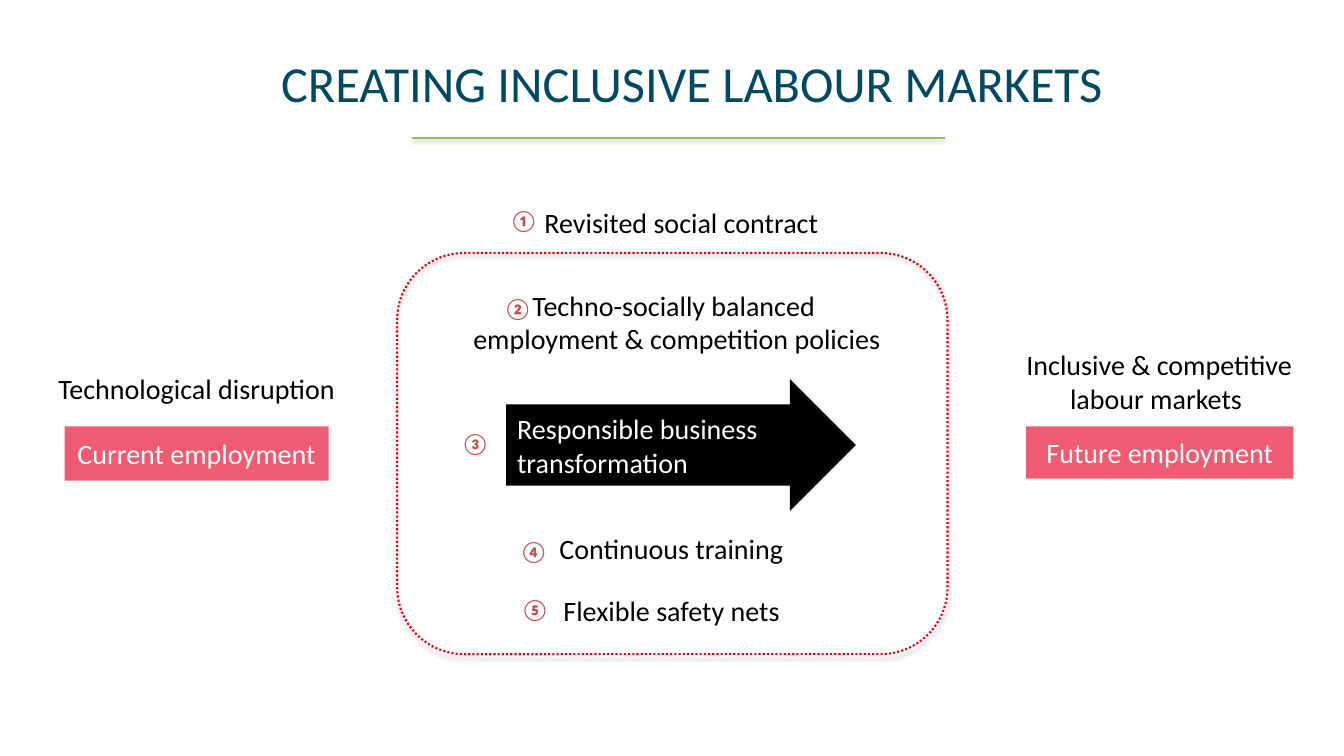
from lxml.etree import SubElement
from pptx import Presentation
from pptx.dml.color import RGBColor
from pptx.enum.dml import MSO_LINE
from pptx.enum.shapes import MSO_CONNECTOR, MSO_SHAPE
from pptx.enum.text import MSO_ANCHOR, PP_ALIGN
from pptx.oxml.ns import qn
from pptx.util import Inches, Pt

deck = Presentation()
deck.slide_width, deck.slide_height = Inches(13.33), Inches(7.5)
column, row = deck.slide_width / 100, deck.slide_height / 100
slide = deck.slides.add_slide(deck.slide_layouts[6])
shapes = slide.shapes
LEFT, CENTER = PP_ALIGN.LEFT, PP_ALIGN.CENTER


def colour(code):
    return RGBColor.from_string(code)


def write(holder, lines, align, ink, size=20, bold=False, inset=(0.11, 0.06), wrap=True):
    frame = holder.text_frame
    across, down = map(Inches, inset)
    settings = {"word_wrap": wrap, "margin_left": across, "margin_right": across,
                "margin_top": down, "margin_bottom": down}
    for key, value in settings.items():
        setattr(frame, key, value)
    for index, line in enumerate(lines):
        paragraph = frame.paragraphs[0] if index == 0 else frame.add_paragraph()
        paragraph.alignment = align
        run = paragraph.add_run()
        run.text = line
        for key, value in {"name": "Calibri", "size": Pt(size), "bold": bold}.items():
            setattr(run.font, key, value)
        run.font.color.rgb = colour(ink)


title = shapes.add_textbox(6.3 * column, 6.27 * row, 90.38 * column, 9.47 * row)
write(title, ["CREATING INCLUSIVE LABOUR MARKETS"], CENTER, "004962", 36, inset=(0.1, 0.05))

underline = shapes.add_connector(MSO_CONNECTOR.STRAIGHT, 30.68 * column, 18.27 * row,
                                 70.35 * column, 18.27 * row)
underline.line.color.rgb = colour("9BBB59")
underline.line.width = Pt(1)

policy_frame = shapes.add_shape(MSO_SHAPE.ROUNDED_RECTANGLE, 29.55 * column, 33.47 * row,
                                40.95 * column, 53.07 * row)
policy_frame.adjustments[0] = 0.167
policy_frame.fill.background()
policy_frame.line.color.rgb = colour("E50012")
policy_frame.line.width = Pt(1.5)
policy_frame.line.dash_style = MSO_LINE.ROUND_DOT

for bordered, opacity, distance in [(underline, 38, 1.6), (policy_frame, 35, 1.8)]:
    effects = SubElement(bordered.element.spPr, qn("a:effectLst"))
    shadow = SubElement(effects, qn("a:outerShdw"), blurRad=str(Pt(3.1)),
                        dist=str(Pt(distance)), dir="5400000", rotWithShape="0")
    black = SubElement(shadow, qn("a:srgbClr"), val="000000")
    SubElement(black, qn("a:alpha"), val=str(opacity * 1000))

blocks = [
    (MSO_SHAPE.RECTANGLE, 4.8, 56.4, 19.65, 7.2, "EF5B70", CENTER, "Current employment"),
    (MSO_SHAPE.RIGHT_ARROW, 37.65, 50.13, 26.03, 17.47, "000000", LEFT,
     "Responsible business transformation"),
    (MSO_SHAPE.RECTANGLE, 76.35, 56.4, 19.88, 6.93, "EF5B70", CENTER, "Future employment"),
]
for outline, left, top, width, height, fill, align, label in blocks:
    block = shapes.add_shape(outline, left * column, top * row, width * column, height * row)
    block.shadow.inherit = False
    block.fill.solid()
    block.fill.fore_color.rgb = colour(fill)
    block.line.fill.background()
    if outline == MSO_SHAPE.RIGHT_ARROW:
        block.adjustments[0], block.adjustments[1] = 0.616, 0.5
    block.text_frame.vertical_anchor = MSO_ANCHOR.MIDDLE
    write(block, [label], align, "FFFFFF")

captions = [
    (2.25, 48.4, 24.75, 5.47, CENTER, ["Technological disruption"]),
    (73.5, 45.2, 25.5, 9.6, CENTER, ["Inclusive & competitive", "labour markets "]),
    (39.68, 26.4, 22.5, 4.93, LEFT, ["Revisited social contract"]),
    (32.55, 37.33, 35.63, 9.6, CENTER,
     ["Techno-socially balanced ", "employment & competition policies"]),
    (40.8, 69.47, 23.03, 5.2, LEFT, ["Continuous training"]),
    (41.1, 77.73, 23.48, 5.2, LEFT, ["Flexible safety nets"]),
]
for left, top, width, height, align, lines in captions:
    caption = shapes.add_textbox(left * column, top * row, width * column, height * row)
    write(caption, lines, align, "000000")

marker_spots = [(37.2, 26.8), (36.75, 38.4), (33.6, 56.27), (37.95, 70.53), (38.03, 78.27)]
for numeral, (left, top) in zip("①②③④⑤", marker_spots):
    marker = shapes.add_textbox(left * column, top * row, 3.6 * column, 4.67 * row)
    write(marker, [numeral], LEFT, "C0504D", 15, True, (0.1, 0.05), False)

deck.save("out.pptx")
